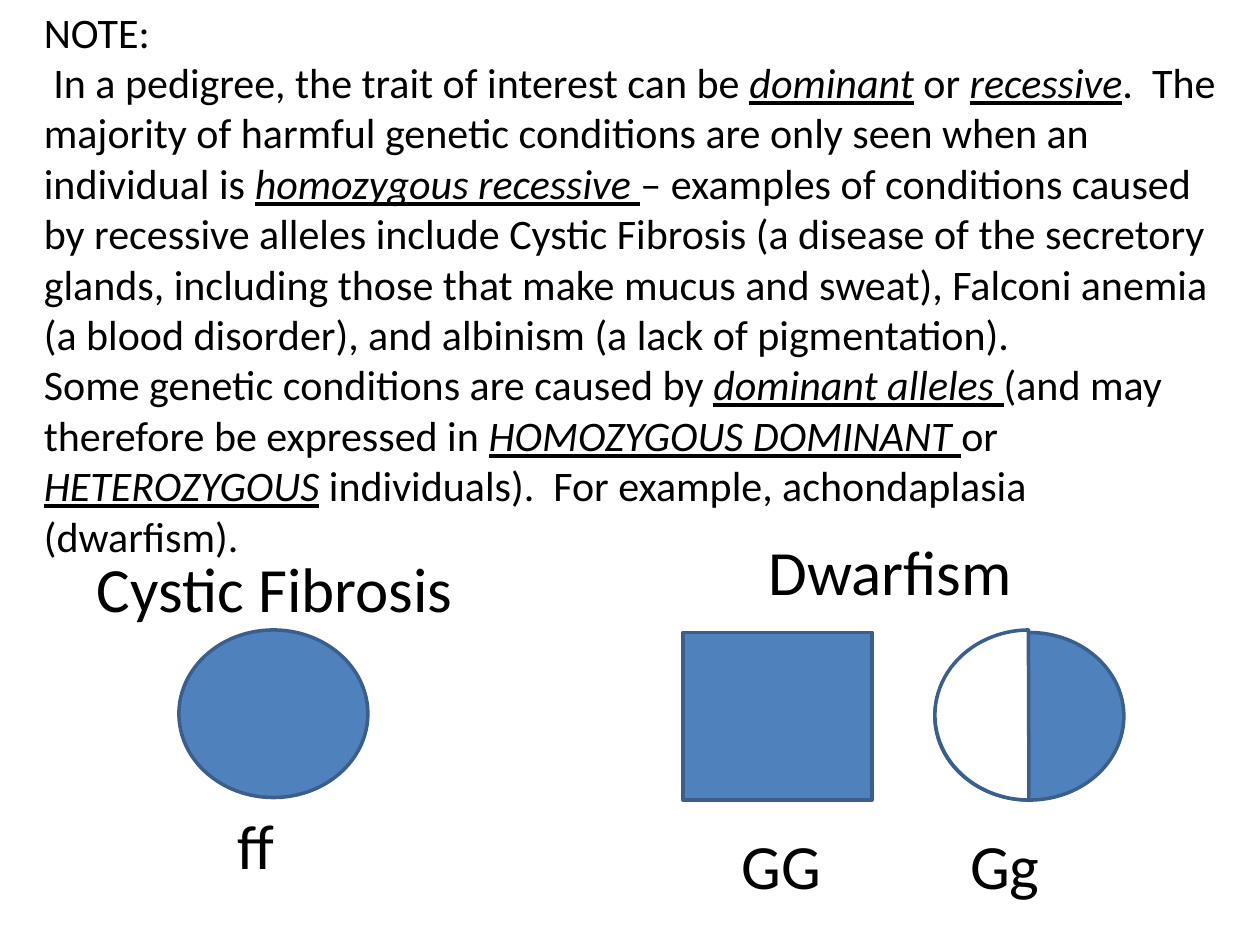
from pptx import Presentation
from pptx.dml.color import RGBColor
from pptx.enum.shapes import MSO_SHAPE as SHAPE
from pptx.enum.text import MSO_AUTO_SIZE as AUTO_SIZE
from pptx.util import Inches, Pt

BLACK = RGBColor(0x00, 0x00, 0x00)
WHITE = RGBColor(0xFF, 0xFF, 0xFF)
BLUE = RGBColor(0x4F, 0x81, 0xBD)
OUTLINE = RGBColor(0x3A, 0x5F, 0x8C)
FONT = "Calibri"

# Each paragraph alternates plain and emphasised runs, starting with plain.
NOTE = [
    ["NOTE:"],
    [" In a pedigree, the trait of interest can be ", "dominant", " or ", "recessive",
     ".  The majority of harmful genetic conditions are only seen when an individual is ",
     "homozygous recessive ",
     "– examples of conditions caused by recessive alleles include Cystic Fibrosis "
     "(a disease of the secretory glands, including those that make mucus and sweat), "
     "Falconi anemia (a blood disorder), and albinism (a lack of pigmentation).  "],
    ["Some genetic conditions are caused by ", "dominant alleles ",
     "(and may therefore be expressed in ", "HOMOZYGOUS DOMINANT ", "or ",
     "HETEROZYGOUS", " individuals).  For example, achondaplasia (dwarfism)."],
]

# text, left, top, width
LABELS = [
    ("Cystic Fibrosis", 0.67, 4.31, 3.25),
    ("Dwarfism", 6, 4.18, 2.33),
    ("ff", 1.79, 6.35, 0.75),
    ("GG", 5.79, 6.51, 1.12),
    ("Gg", 7.6, 6.51, 1.12),
]
LABEL_H = 0.71

# preset, left, top, height, fill, adjustments
SYMBOL_W = 1.5
SYMBOLS = [
    (SHAPE.OVAL, 1.42, 5, 1.33, BLUE, ()),
    (SHAPE.RECTANGLE, 5.42, 5.02, 1.33, BLUE, ()),
    (SHAPE.OVAL, 7.42, 5.02, 1.33, BLUE, ()),
    (SHAPE.CHORD, 7.42, 5, 1.35, WHITE, (54.155, 161.608)),
]


def add_text(slide, paragraphs, box, size):
    """Add a wrapping text box whose every second run is emphasised."""
    tf = slide.shapes.add_textbox(*map(Inches, box)).text_frame
    tf.word_wrap = True
    tf.auto_size = AUTO_SIZE.SHAPE_TO_FIT_TEXT
    for i, runs in enumerate(paragraphs):
        p = tf.add_paragraph() if i else tf.paragraphs[0]
        for j, text in enumerate(runs):
            r = p.add_run()
            r.text = text
            r.font.name = FONT
            r.font.size = Pt(size)
            r.font.color.rgb = BLACK
            if j % 2:
                r.font.italic = r.font.underline = True


def add_symbol(slide, preset, left, top, height, fill, adjustments):
    """Add one outlined pedigree symbol."""
    sp = slide.shapes.add_shape(preset, *map(Inches, (left, top, SYMBOL_W, height)))
    for i, value in enumerate(adjustments):
        sp.adjustments[i] = value
    sp.shadow.inherit = False
    sp.fill.solid()
    sp.fill.fore_color.rgb = fill
    sp.line.color.rgb = OUTLINE
    sp.line.width = Pt(2)


prs = Presentation()
prs.slide_width, prs.slide_height = Inches(10), Inches(7.5)
s = prs.slides.add_slide(prs.slide_layouts.get_by_name("Blank"))

add_text(s, NOTE, (0.25, 0, 9.5, 4.54), 24)
for symbol in SYMBOLS:
    add_symbol(s, *symbol)
for text, left, top, width in LABELS:
    add_text(s, [[text]], (left, top, width, LABEL_H), 36)

prs.save("out.pptx")
